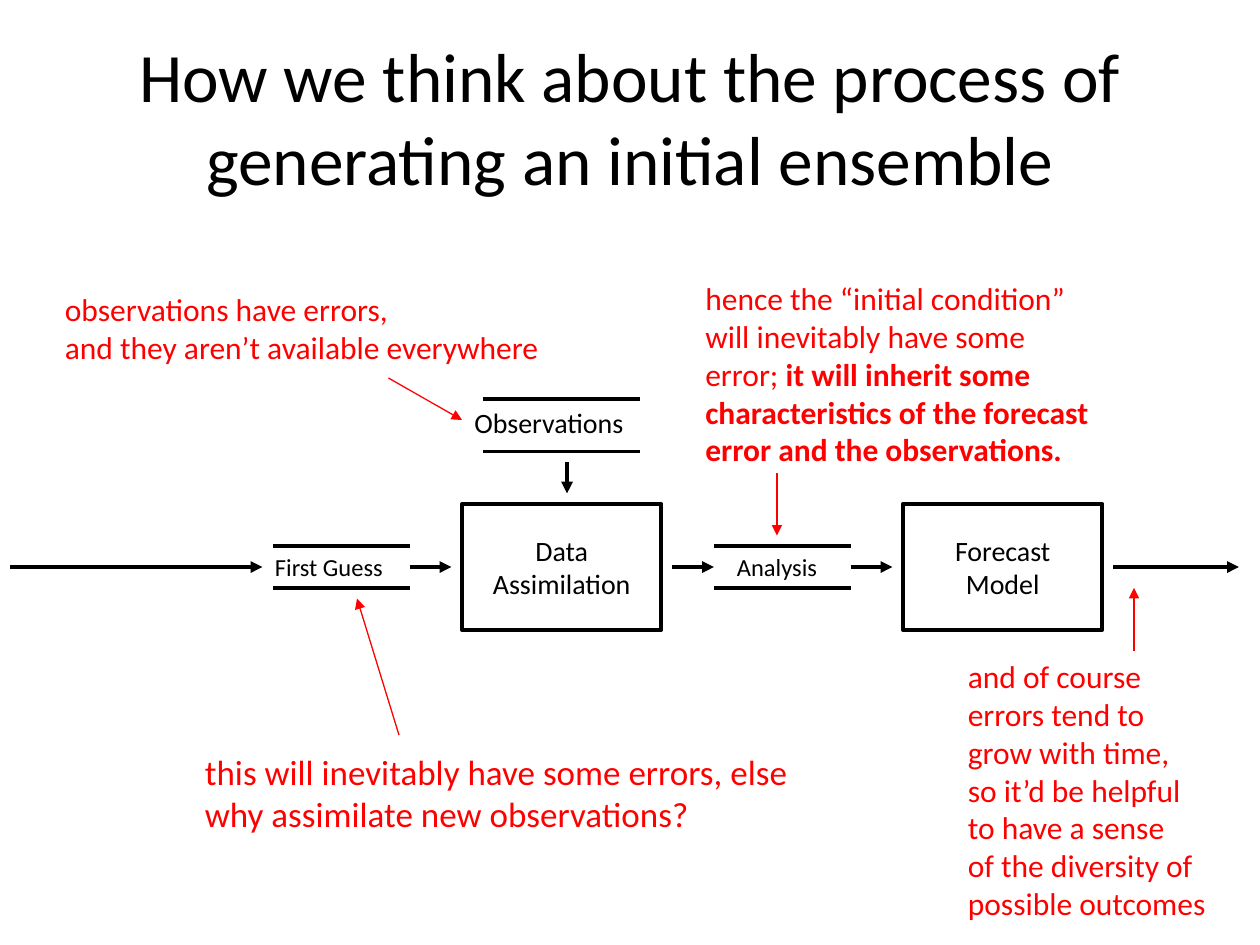
from lxml.etree import SubElement
from pptx import Presentation
from pptx.dml.color import RGBColor
from pptx.enum.shapes import MSO_CONNECTOR, MSO_SHAPE
from pptx.enum.text import MSO_ANCHOR, MSO_AUTO_SIZE, PP_ALIGN
from pptx.oxml.ns import qn
from pptx.util import Pt

BLACK, RED = "000000", "FF0000"
MID_Y = 324
GAP = 6


def rgb(value):
    return RGBColor.from_string(value)


def set_font(font, color, **formats):
    font.color.rgb = rgb(color)
    for name, value in {"name": "Calibri", **formats}.items():
        setattr(font, name, value)


def add_lines(tf, lines, size, color, align):
    for i, line in enumerate(lines):
        p = tf.paragraphs[0] if i == 0 else tf.add_paragraph()
        p.alignment = align
        runs = [(line, False)] if isinstance(line, str) else line
        for text, bold in runs:
            r = p.add_run()
            r.text = text
            set_font(r.font, color, size=Pt(size), bold=bold)


def add_label(slide, box, lines, size, color=BLACK, align=PP_ALIGN.LEFT):
    sp = slide.shapes.add_textbox(*map(Pt, box))
    tf = sp.text_frame
    tf.word_wrap = False
    tf.auto_size = MSO_AUTO_SIZE.SHAPE_TO_FIT_TEXT
    add_lines(tf, lines, size, color, align)


def add_line(slide, start, end, color=BLACK, width=2.25, arrow=False):
    cx = slide.shapes.add_connector(MSO_CONNECTOR.STRAIGHT, *map(Pt, (*start, *end)))
    cx.line.color.rgb = rgb(color)
    cx.line.width = Pt(width)
    if arrow:
        SubElement(cx.line._get_or_add_ln(), qn("a:tailEnd"), type="triangle")
    SubElement(cx._element.spPr, qn("a:effectLst"))


def add_title(slide, box, text):
    sp = slide.shapes.title
    for name, value in zip(("left", "top", "width", "height"), box):
        setattr(sp, name, Pt(value))
    tf = sp.text_frame
    tf.auto_size = MSO_AUTO_SIZE.NONE
    tf.vertical_anchor = MSO_ANCHOR.MIDDLE
    add_lines(tf, [text], 39.6, BLACK, PP_ALIGN.CENTER)


def add_process(slide, box, lines):
    sp = slide.shapes.add_shape(MSO_SHAPE.RECTANGLE, *map(Pt, box))
    sp.shadow.inherit = False
    sp.fill.background()
    sp.line.color.rgb = rgb(BLACK)
    sp.line.width = Pt(2.25)
    tf = sp.text_frame
    tf.vertical_anchor = MSO_ANCHOR.MIDDLE
    add_lines(tf, lines, 16, BLACK, PP_ALIGN.CENTER)


def add_data_store(slide, box, text, size, label_dx, label_w):
    x, y, w, h = box
    for rail_y in (y, y + h):
        add_line(slide, (x, rail_y), (x + w, rail_y))
    add_label(slide, (x + label_dx, y, label_w, h), [text], size)


def add_flow(slide, box):
    x, y, w, h = box
    process_w, store_w, store_h = 114, 78, 24
    assimilation_x, forecast_x = x + 258, x + 510
    guess_x, analysis_x = x + 150, x + 402
    store_y = MID_Y - store_h / 2
    add_process(slide, (assimilation_x, y, process_w, h), ["Data", "Assimilation"])
    add_process(slide, (forecast_x, y, process_w, h), ["Forecast", "Model"])
    add_data_store(slide, (guess_x, store_y, store_w, store_h), "First Guess", 14, -GAP, 86.4)
    add_data_store(slide, (analysis_x, store_y, store_w, store_h), "Analysis", 14, GAP, 67)
    add_data_store(slide, (x + 270, y - 60, 90, 30), "Observations", 16, -12, 108.7)
    spans = [
        (x, guess_x - GAP),
        (guess_x + store_w, assimilation_x - GAP),
        (assimilation_x + process_w + GAP, analysis_x),
        (analysis_x + store_w, forecast_x - GAP),
        (forecast_x + process_w + GAP, x + w),
    ]
    for start, end in spans:
        add_line(slide, (start, MID_Y), (end, MID_Y), arrow=True)
    add_line(slide, (x + 318, y - 24), (x + 318, y - GAP), arrow=True)


def add_comment(slide, box, lines, size, start, end):
    add_label(slide, box, lines, size, RED)
    add_line(slide, start, end, RED, 0.75, arrow=True)


def main():
    prs = Presentation()
    prs.slide_width, prs.slide_height = Pt(720), Pt(540)
    s = prs.slides.add_slide(prs.slide_layouts[5])
    add_title(s, (36, 21.6, 648, 90),
              "How we think about the process of generating an initial ensemble")
    add_flow(s, (6, 288, 702, 72))
    add_comment(s, (30, 162, 288, 51),
                ["observations have errors,", "and they aren’t available everywhere"],
                18, (222, 216), (264, 240))
    add_comment(s, (396, 156, 236, 116.6),
                ["hence the “initial condition”", "will inevitably have some",
                 [("error; ", False), ("it will inherit some", True)],
                 [("characteristics of the forecast", True)],
                 [("error and the observations.", True)]],
                18, (444, 270), (444, 306))
    add_comment(s, (110, 425.5, 376.6, 55.4),
                ["this will inevitably have some errors, else",
                 "why assimilate new observations?"],
                20, (228, 420), (204, 342))
    add_comment(s, (546, 372, 163.4, 158.4),
                ["and of course", "errors tend to", "grow with time,", "so it’d be helpful",
                 "to have a sense", "of the diversity of", "possible outcomes"],
                18, (648, 372), (648, 336))
    prs.save("out.pptx")


if __name__ == "__main__":
    main()
